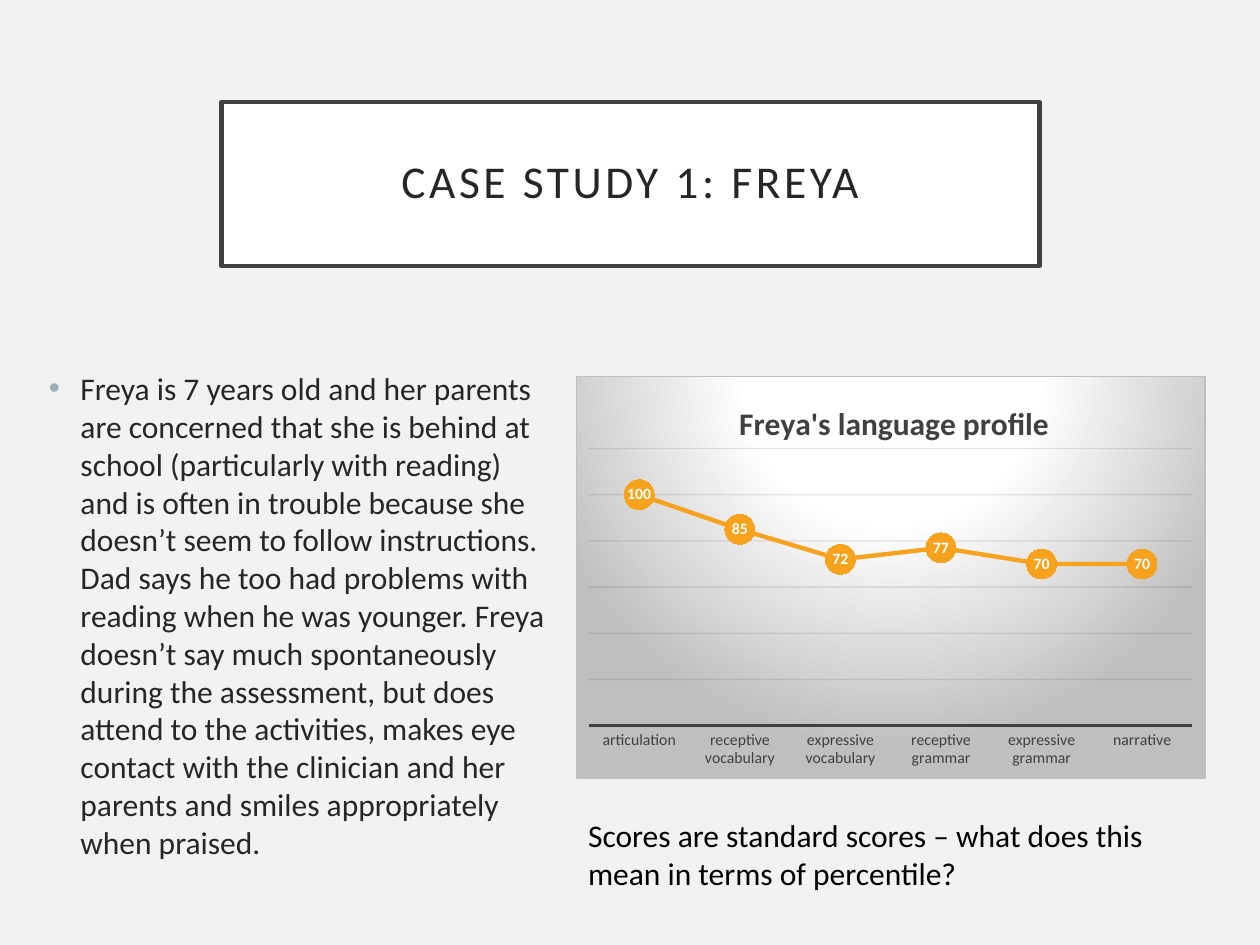
from dataclasses import dataclass

from lxml import etree
from pptx import Presentation
from pptx import util as u
from pptx.chart.data import CategoryChartData
from pptx.dml.color import RGBColor
from pptx.enum import chart as charts, shapes, text
from pptx.oxml import parse_xml
from pptx.oxml.ns import nsdecls, qn

FONT = "Calibri"
COLORS = {
    "background": "F2F2F2", "white": "FFFFFF", "black": "000000",
    "outline": "404040", "body": "262626", "bullet": "9BAFB5",
    "grey": "BFBFBF", "orange": "F6A21D", "grid": "0D0D0D",
}
SCORES = {
    "articulation": 100,
    "receptive vocabulary": 85,
    "expressive vocabulary": 72,
    "receptive grammar": 77,
    "expressive grammar": 70,
    "narrative": 70,
}
CASE_TEXT = (
    "Freya is 7 years old and her parents are concerned that she is behind at school "
    "(particularly with reading) and is often in trouble because she doesn’t seem to follow "
    "instructions. Dad says he too had problems with reading when he was younger. Freya "
    "doesn’t say much spontaneously during the assessment, but does attend to the activities, "
    "makes eye contact with the clinician and her parents and smiles appropriately when praised."
)


@dataclass(frozen=True)
class Box:
    left: float
    top: float
    width: float
    height: float

    def lengths(self) -> tuple:
        return tuple(u.Pt(n) for n in (self.left, self.top, self.width, self.height))


TITLE_BOX = Box(126.5, 58.3, 467.5, 93.6)
CASE_BOX = Box(20.9, 207.4, 301, 306.7)
CHART_BOX = Box(329, 214.6, 360, 230.4)
QUESTION_BOX = Box(329, 463, 360, 51)


def color(name: str) -> RGBColor:
    return RGBColor.from_string(COLORS[name])


def set_font(font, size: float, color_name: str, bold: bool = False) -> None:
    font.name, font.size, font.bold = FONT, u.Pt(size), bold
    font.color.rgb = color(color_name)


def set_line(line, color_name: str, width: float) -> None:
    line.color.rgb = color(color_name)
    line.width = u.Pt(width)


def write_text(shape, content: str, *, size: float = 18, color_name: str = "body",
               align=text.PP_ALIGN.LEFT, spacing: float = 1.0,
               tracking: float = 0, bullet_indent: float = 0) -> None:
    shape.text_frame.word_wrap = True
    paragraph = shape.text_frame.paragraphs[0]
    paragraph.alignment, paragraph.line_spacing = align, spacing
    if bullet_indent:
        properties = paragraph._p.get_or_add_pPr()
        properties.set("marL", str(u.Pt(bullet_indent)))
        properties.set("indent", str(-u.Pt(bullet_indent)))
        bullet_color = etree.SubElement(properties, qn("a:buClr"))
        etree.SubElement(bullet_color, qn("a:srgbClr"), val=COLORS["bullet"])
        etree.SubElement(properties, qn("a:buFont"), typeface="Arial")
        etree.SubElement(properties, qn("a:buChar"), char="•")
    run = paragraph.add_run()
    run.text = content
    set_font(run.font, size, color_name)
    if tracking:
        run.font._element.set("spc", str(int(tracking * 100)))


def add_title(slide) -> None:
    shape = slide.shapes.add_shape(shapes.MSO_SHAPE.RECTANGLE, *TITLE_BOX.lengths())
    shape.shadow.inherit = False
    shape.fill.solid()
    shape.fill.fore_color.rgb = color("white")
    set_line(shape.line, "outline", 2.5)
    shape.text_frame.vertical_anchor = text.MSO_ANCHOR.MIDDLE
    write_text(shape, "CASE STUDY 1: FREYA", size=26, align=text.PP_ALIGN.CENTER,
               spacing=0.9, tracking=2)


def manual_layout(x: float, y: float, size: str = "", target: str = ""):
    """Position a chart part by fractions of the chart's size."""
    return parse_xml(
        f'<c:layout {nsdecls("c")}><c:manualLayout>{target}'
        f'<c:xMode val="edge"/><c:yMode val="edge"/>'
        f'<c:x val="{x}"/><c:y val="{y}"/>{size}</c:manualLayout></c:layout>')


def style_chart_area(chart) -> None:
    """Apply the radial background, the layouts and the pale gridlines."""
    stops = "".join(
        f'<a:gs pos="{position}"><a:srgbClr val="{COLORS[name]}"/></a:gs>'
        for position, name in ((0, "white"), (39000, "white"), (100000, "grey")))
    area = parse_xml(
        f'<c:spPr {nsdecls("c", "a")}><a:gradFill><a:gsLst>{stops}</a:gsLst>'
        '<a:path path="circle"><a:fillToRect l="50000" t="-80000" r="50000" b="180000"/></a:path>'
        f'</a:gradFill><a:ln w="{u.Pt(0.75)}"><a:solidFill><a:srgbClr val="{COLORS["grey"]}"/>'
        '</a:solidFill></a:ln></c:spPr>')
    root = chart._chartSpace
    root.find(qn("c:chart")).addnext(area)

    plot_area = root.find(".//" + qn("c:plotArea"))
    title = root.find(".//" + qn("c:title"))
    for parent in (plot_area, title):
        for layout in parent.findall(qn("c:layout")):
            parent.remove(layout)
    plot_area.insert(0, manual_layout(0.02, 0.18, '<c:w val="0.96"/><c:h val="0.69"/>',
                                      '<c:layoutTarget val="inner"/>'))
    title.find(qn("c:tx")).addnext(manual_layout(0.25, 0.05))

    grid_color = root.find(".//" + qn("c:majorGridlines")).find(".//" + qn("a:srgbClr"))
    etree.SubElement(grid_color, qn("a:alpha"), val="10000")


def add_profile_chart(slide) -> None:
    data = CategoryChartData()
    data.categories = SCORES.keys()
    data.add_series("Series 1", SCORES.values())
    chart = slide.shapes.add_chart(charts.XL_CHART_TYPE.LINE_MARKERS,
                                   *CHART_BOX.lengths(), data).chart
    set_font(chart.font, 10, "black")
    chart.has_legend = False
    chart.has_title = True
    title = chart.chart_title.text_frame.paragraphs[0].add_run()
    title.text = "Freya's language profile"
    set_font(title.font, 18, "outline", bold=True)

    category_axis, value_axis = chart.category_axis, chart.value_axis
    category_axis.major_tick_mark = charts.XL_TICK_MARK.NONE
    set_font(category_axis.tick_labels.font, 9, "outline")
    set_line(category_axis.format.line, "outline", 1.5)
    value_axis.visible = False
    value_axis.minimum_scale, value_axis.maximum_scale, value_axis.major_unit = 0, 120, 20
    value_axis.has_major_gridlines = True
    set_line(value_axis.major_gridlines.format.line, "grid", 0.75)

    plot = chart.plots[0]
    plot.vary_by_categories = False
    series = plot.series[0]
    series.smooth = False
    set_line(series.format.line, "orange", 2.5)
    series.marker.style, series.marker.size = charts.XL_MARKER_STYLE.CIRCLE, 17
    series.marker.format.fill.solid()
    series.marker.format.fill.fore_color.rgb = color("orange")
    series.marker.format.line.fill.background()
    labels = series.data_labels
    labels.show_value = True
    labels.position = charts.XL_LABEL_POSITION.CENTER
    set_font(labels.font, 9, "white", bold=True)
    style_chart_area(chart)


def main() -> None:
    presentation = Presentation()
    presentation.slide_width, presentation.slide_height = u.Pt(720), u.Pt(540)
    slide = presentation.slides.add_slide(presentation.slide_layouts[6])
    slide.background.fill.solid()
    slide.background.fill.fore_color.rgb = color("background")

    add_title(slide)
    write_text(slide.shapes.add_textbox(*CASE_BOX.lengths()), CASE_TEXT, bullet_indent=18)
    add_profile_chart(slide)
    write_text(slide.shapes.add_textbox(*QUESTION_BOX.lengths()),
               "Scores are standard scores – what does this mean in terms of percentile?",
               color_name="black")
    presentation.save("out.pptx")


if __name__ == "__main__":
    main()
